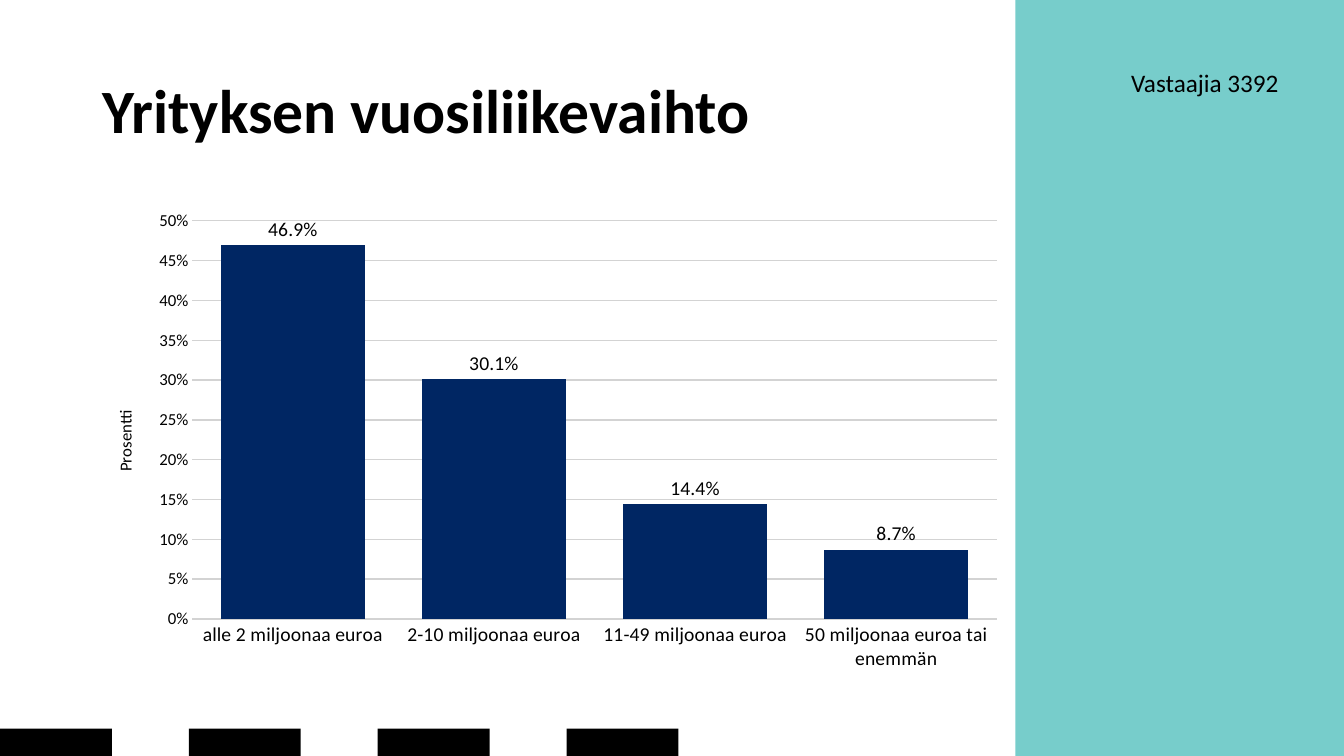
import pptx
import pptx.chart.data
import pptx.dml.color
import pptx.enum.chart
import pptx.enum.shapes
import pptx.enum.text
import pptx.oxml
import pptx.oxml.ns
import pptx.util
from pptx.util import Inches

RGBColor = pptx.dml.color.RGBColor
BLACK = RGBColor(0x00, 0x00, 0x00)
WHITE = RGBColor(0xFF, 0xFF, 0xFF)
TEAL = RGBColor(0x77, 0xCD, 0xCB)
NAVY = RGBColor(0x00, 0x26, 0x63)
GRID_GREY = RGBColor(0xD3, 0xD3, 0xD3)
FONT = "Calibri"

TURNOVER = {
    "alle 2 miljoonaa euroa": 0.469,
    "2-10 miljoonaa euroa": 0.301,
    "11-49 miljoonaa euroa": 0.144,
    "50 miljoonaa euroa tai enemmän": 0.087,
}


def set_font(font, size, bold=False):
    font.name = FONT
    font.size = pptx.util.Pt(size)
    font.bold = bold
    font.color.rgb = BLACK


def add_block(slide, x, y, w, h, color):
    sp = slide.shapes.add_shape(
        pptx.enum.shapes.MSO_SHAPE.RECTANGLE,
        Inches(x), Inches(y), Inches(w), Inches(h))
    sp.shadow.inherit = False
    sp.fill.solid()
    sp.fill.fore_color.rgb = color
    sp.line.fill.background()


def add_text(slide, x, y, w, h, text, size, bold=False,
             align=pptx.enum.text.PP_ALIGN.LEFT, spacing=1.0):
    tf = slide.shapes.add_textbox(
        Inches(x), Inches(y), Inches(w), Inches(h)).text_frame
    tf.word_wrap = True
    tf.vertical_anchor = pptx.enum.text.MSO_ANCHOR.MIDDLE
    p = tf.paragraphs[0]
    p.text = text
    p.alignment = align
    p.line_spacing = spacing
    set_font(p.font, size, bold)


def style_plot_area(chart, x, y, w, h):
    """Place the inner plot area by fractions of the chart and fill it white."""
    plot_area = chart._chartSpace.chart.plotArea
    for layout in plot_area.findall(pptx.oxml.ns.qn("c:layout")):
        plot_area.remove(layout)
    ns = pptx.oxml.ns.nsdecls("c", "a")
    sizes = "".join(f'<c:{tag} val="{val}"/>' for tag, val in
                    (("x", x), ("y", y), ("w", w), ("h", h)))
    plot_area.insert(0, pptx.oxml.parse_xml(
        f'<c:layout {ns}><c:manualLayout><c:layoutTarget val="inner"/>'
        '<c:xMode val="edge"/><c:yMode val="edge"/>'
        f'{sizes}</c:manualLayout></c:layout>'))
    plot_area.append(pptx.oxml.parse_xml(
        f'<c:spPr {ns}><a:solidFill><a:srgbClr val="{WHITE}"/>'
        '</a:solidFill></c:spPr>'))


def style_axis(axis, size):
    axis.major_tick_mark = pptx.enum.chart.XL_TICK_MARK.INSIDE
    axis.minor_tick_mark = pptx.enum.chart.XL_TICK_MARK.NONE
    axis.format.line.fill.background()
    set_font(axis.tick_labels.font, size)


def add_turnover_chart(slide):
    data = pptx.chart.data.CategoryChartData(number_format="0.0%")
    data.categories = list(TURNOVER)
    data.add_series("Series 1", list(TURNOVER.values()))
    chart = slide.shapes.add_chart(
        pptx.enum.chart.XL_CHART_TYPE.COLUMN_CLUSTERED,
        Inches(0.92), Inches(2), Inches(9.15), Inches(4.76), data).chart
    chart.has_legend = False
    chart.has_title = False
    set_font(chart.font, 11)
    style_plot_area(chart, 0.108, 0.04, 0.872, 0.83)

    style_axis(chart.category_axis, 14)
    axis = chart.value_axis
    style_axis(axis, 12)
    axis.minimum_scale = 0
    axis.maximum_scale = 0.5
    axis.major_unit = 0.05
    axis.tick_labels.number_format = "0%"
    axis.tick_labels.number_format_is_linked = False
    grid = axis.major_gridlines.format.line
    grid.color.rgb = GRID_GREY
    grid.width = pptx.util.Pt(1)
    p = axis.axis_title.text_frame.paragraphs[0]
    p.text = "Prosentti"
    set_font(p.font, 12)

    plot = chart.plots[0]
    plot.gap_width = 40
    plot.vary_by_categories = False
    fill = plot.series[0].format.fill
    fill.solid()
    fill.fore_color.rgb = NAVY
    labels = plot.series[0].data_labels
    labels.show_value = True
    labels.position = pptx.enum.chart.XL_LABEL_POSITION.OUTSIDE_END
    labels.number_format = "0.0%"
    labels.number_format_is_linked = False
    set_font(labels.font, 14)


def main():
    prs = pptx.Presentation()
    prs.slide_width = Inches(13.33)
    prs.slide_height = Inches(7.5)
    slide = prs.slides.add_slide(prs.slide_layouts[6])

    add_block(slide, 10.07, 0, 3.26, 7.5, TEAL)
    for i in range(4):
        add_block(slide, i * 1.873, 7.23, 1.11, 0.27, BLACK)
    add_text(slide, 0.92, 0.4, 11.5, 1.45, "Yrityksen vuosiliikevaihto", 44,
             bold=True, spacing=0.9)
    add_text(slide, 10.71, 0.62, 2.07, 0.4, "Vastaajia 3392", 18,
             align=pptx.enum.text.PP_ALIGN.RIGHT)
    add_turnover_chart(slide)
    prs.save("out.pptx")


if __name__ == "__main__":
    main()
